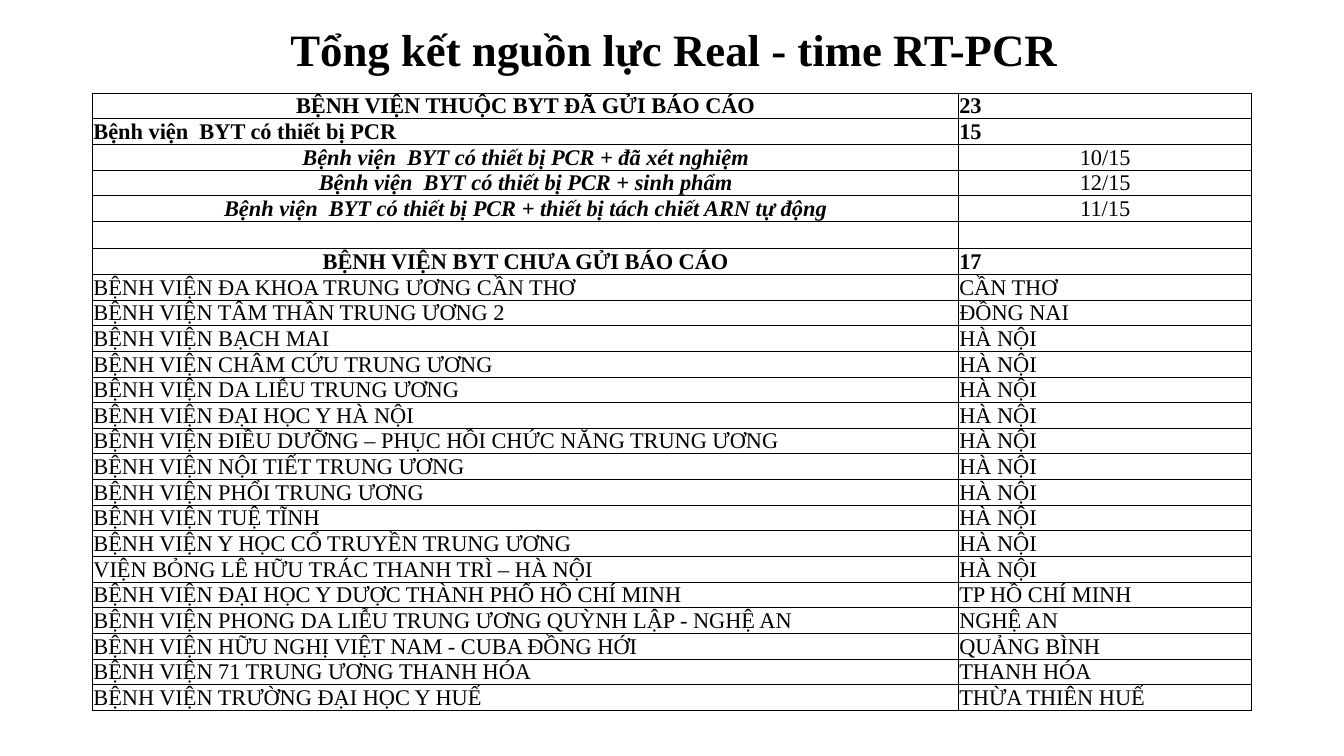
import lxml.etree
import pptx
import pptx.util
import pptx.dml.color
import pptx.enum.text
import pptx.oxml.ns

Pt = pptx.util.Pt
ALIGN = pptx.enum.text.PP_ALIGN
ANCHOR = pptx.enum.text.MSO_ANCHOR
qn = pptx.oxml.ns.qn

COLOURS = {"text": "000000", "border": "000000"}
FONT = "Times New Roman"
TABLE_SIZE = 16
HOSPITAL_SHARE = 0.747

PLAIN = {"bold": False, "italic": False}
STRONG = {"bold": True, "italic": False}
STRONG_ITALIC = {"bold": True, "italic": True}

ROW_STYLES = {
    "heading": ((ALIGN.CENTER, STRONG), (ALIGN.LEFT, STRONG)),
    "subtotal": ((ALIGN.LEFT, STRONG), (ALIGN.LEFT, STRONG)),
    "detail": ((ALIGN.CENTER, STRONG_ITALIC), (ALIGN.CENTER, PLAIN)),
    "hospital": ((ALIGN.LEFT, PLAIN), (ALIGN.LEFT, PLAIN)),
}

SUMMARY = [
    ("heading", "BỆNH VIỆN THUỘC BYT ĐÃ GỬI BÁO CÁO", "23"),
    ("subtotal", "Bệnh viện  BYT có thiết bị PCR", "15"),
    ("detail", "Bệnh viện  BYT có thiết bị PCR + đã xét nghiệm", "10/15"),
    ("detail", "Bệnh viện  BYT có thiết bị PCR + sinh phẩm", "12/15"),
    ("detail", "Bệnh viện  BYT có thiết bị PCR + thiết bị tách chiết ARN tự động", "11/15"),
    ("hospital", "", ""),
    ("heading", "BỆNH VIỆN BYT CHƯA GỬI BÁO CÁO", "17"),
]

MISSING_REPORTS = [
    ("BỆNH VIỆN ĐA KHOA TRUNG ƯƠNG CẦN THƠ", "CẦN THƠ"),
    ("BỆNH VIỆN TÂM THẦN TRUNG ƯƠNG 2", "ĐỒNG NAI"),
    ("BỆNH VIỆN BẠCH MAI", "HÀ NỘI"),
    ("BỆNH VIỆN CHÂM CỨU TRUNG ƯƠNG", "HÀ NỘI"),
    ("BỆNH VIỆN DA LIỄU TRUNG ƯƠNG", "HÀ NỘI"),
    ("BỆNH VIỆN ĐẠI HỌC Y HÀ NỘI", "HÀ NỘI"),
    ("BỆNH VIỆN ĐIỀU DƯỠNG – PHỤC HỒI CHỨC NĂNG TRUNG ƯƠNG", "HÀ NỘI"),
    ("BỆNH VIỆN NỘI TIẾT TRUNG ƯƠNG", "HÀ NỘI"),
    ("BỆNH VIỆN PHỔI TRUNG ƯƠNG", "HÀ NỘI"),
    ("BỆNH VIỆN TUỆ TĨNH", "HÀ NỘI"),
    ("BỆNH VIỆN Y HỌC CỔ TRUYỀN TRUNG ƯƠNG", "HÀ NỘI"),
    ("VIỆN BỎNG LÊ HỮU TRÁC THANH TRÌ – HÀ NỘI", "HÀ NỘI"),
    ("BỆNH VIỆN ĐẠI HỌC Y DƯỢC THÀNH PHỐ HỒ CHÍ MINH", "TP HỒ CHÍ MINH"),
    ("BỆNH VIỆN PHONG DA LIỄU TRUNG ƯƠNG QUỲNH LẬP - NGHỆ AN", "NGHỆ AN"),
    ("BỆNH VIỆN HỮU NGHỊ VIỆT NAM - CUBA ĐỒNG HỚI", "QUẢNG BÌNH"),
    ("BỆNH VIỆN 71 TRUNG ƯƠNG THANH HÓA", "THANH HÓA"),
    ("BỆNH VIỆN TRƯỜNG ĐẠI HỌC Y HUẾ", "THỪA THIÊN HUẾ"),
]

REPORT_ROWS = SUMMARY + [("hospital", *entry) for entry in MISSING_REPORTS]


def apply(target, values):
    for attribute, value in values.items():
        setattr(target, attribute, value)


def write(paragraph, wording, size, alignment, emphasis):
    paragraph.alignment = alignment
    if not wording:
        lxml.etree.SubElement(paragraph._p, qn("a:endParaRPr"), sz=str(size * 100))
        return
    run = paragraph.add_run()
    run.text = wording
    apply(run.font, {"name": FONT, "size": Pt(size), **emphasis})
    run.font.color.rgb = pptx.dml.color.RGBColor.from_string(COLOURS["text"])


def draw_borders(cell, outer_sides):
    properties = cell._tc.get_or_add_tcPr()
    for position, side in enumerate("LRTB"):
        width = Pt(1 if side in outer_sides else 0.5)
        border = lxml.etree.Element(qn(f"a:ln{side}"), w=str(width))
        fill = lxml.etree.SubElement(border, qn("a:solidFill"))
        lxml.etree.SubElement(fill, qn("a:srgbClr"), val=COLOURS["border"])
        properties.insert(position, border)


def add_heading(slide, left, top, width, height):
    heading = slide.shapes.title
    apply(heading, {"left": Pt(left), "top": Pt(top), "width": Pt(width), "height": Pt(height)})
    frame = heading.text_frame
    apply(frame, {"word_wrap": True, "vertical_anchor": ANCHOR.MIDDLE})
    frame.paragraphs[0].line_spacing = 0.9
    write(frame.paragraphs[0], "Tổng kết nguồn lực Real - time RT-PCR", 32, ALIGN.CENTER, STRONG)


def add_report_table(slide, left, top, width, height):
    last = len(REPORT_ROWS) - 1
    report = slide.shapes.add_table(
        len(REPORT_ROWS), 2, Pt(left), Pt(top), Pt(width), Pt(height)).table
    apply(report, {"first_row": False, "horz_banding": False})
    report.columns[0].width = Pt(width * HOSPITAL_SHARE)
    report.columns[1].width = Pt(width * (1 - HOSPITAL_SHARE))
    for row, (kind, *wordings) in enumerate(REPORT_ROWS):
        report.rows[row].height = Pt(height / len(REPORT_ROWS))
        for column, wording in enumerate(wordings):
            cell = report.cell(row, column)
            apply(cell, {"margin_left": Pt(0.5), "margin_right": Pt(0.5), "margin_top": 0,
                         "margin_bottom": 0, "vertical_anchor": ANCHOR.BOTTOM})
            cell.fill.background()
            outer = "LR"[column] + ("T" if row == 0 else "") + ("B" if row == last else "")
            draw_borders(cell, outer)
            alignment, emphasis = ROW_STYLES[kind][column]
            write(cell.text_frame.paragraphs[0], wording, TABLE_SIZE, alignment, emphasis)


def main():
    deck = pptx.Presentation()
    apply(deck, {"slide_width": Pt(960), "slide_height": Pt(540)})
    slide = deck.slides.add_slide(deck.slide_layouts[5])
    add_heading(slide, 30, 10, 903, 54)
    add_report_table(slide, 66.25, 66.5, 828, 440)
    deck.save("out.pptx")


if __name__ == "__main__":
    main()
